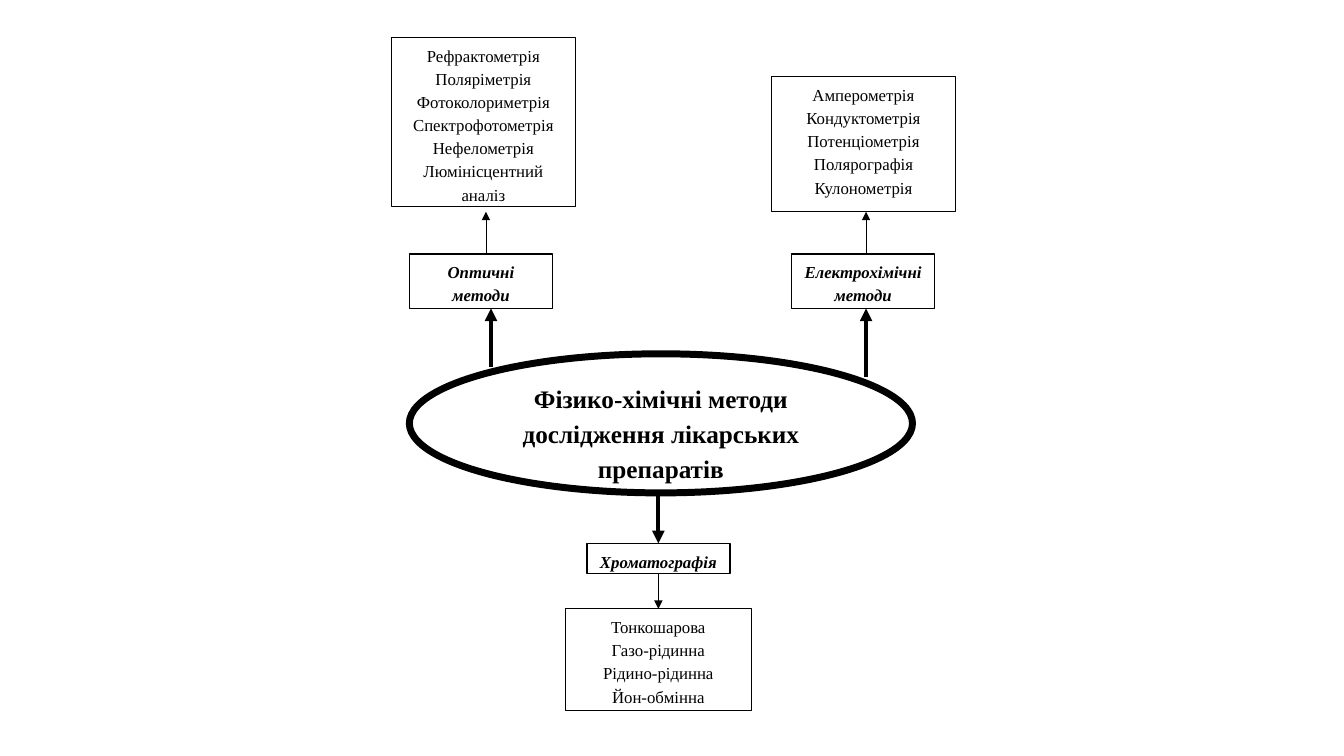
from lxml import etree
from pptx import Presentation
from pptx.dml.color import RGBColor
from pptx.enum.shapes import MSO_CONNECTOR as Connector, MSO_SHAPE as Shape
from pptx.enum.text import MSO_ANCHOR as Anchor, PP_ALIGN as Align
from pptx.oxml.ns import qn
from pptx.util import Inches, Pt

COLORS = {"ink": "000000", "paper": "FFFFFF"}
FONT = "Times New Roman"
TOP, BOTTOM = 0, 2  # connection sites of a rectangle

# Text formats and outline widths for the three kinds of node
STYLES = {
    "topic": ({"size": Pt(18), "bold": True}, 5),
    "method": ({"size": Pt(12), "bold": True, "italic": True}, 1),
    "list": ({"size": Pt(12)}, 0.75),
}
THICK, THIN = 3, 0.25


def color(name):
    return RGBColor.from_string(COLORS[name])


def add_node(slide, kind, box, lines, preset=Shape.RECTANGLE):
    """Outlined shape with centred text, one paragraph per line."""
    font_format, outline = STYLES[kind]
    shape = slide.shapes.add_shape(preset, *map(Inches, box))
    shape.shadow.inherit = False
    shape.fill.solid()
    shape.fill.fore_color.rgb = color("paper")
    shape.line.color.rgb = color("ink")
    shape.line.width = Pt(outline)

    frame = shape.text_frame
    frame.word_wrap = True
    frame.vertical_anchor = Anchor.TOP
    frame.text = "\n".join(lines)
    for paragraph in frame.paragraphs:
        paragraph.alignment = Align.CENTER
        paragraph.line_spacing = 1.15
        paragraph.font.name = FONT
        paragraph.font.color.rgb = color("ink")
        for name, value in font_format.items():
            setattr(paragraph.font, name, value)
    return shape


def add_arrow(slide, x, start, end, width):
    """Vertical arrow pointing at end."""
    arrow = slide.shapes.add_connector(
        Connector.STRAIGHT, *map(Inches, (x, start, x, end)))
    arrow.line.color.rgb = color("ink")
    arrow.line.width = Pt(width)
    etree.SubElement(arrow.line._get_or_add_ln(), qn("a:tailEnd"), type="triangle")
    etree.SubElement(arrow._element.spPr, qn("a:effectLst"))
    return arrow


def add_topic(slide, box):
    add_node(slide, "topic", box,
             ["Фізико-хімічні методи дослідження лікарських препаратів"], Shape.OVAL)


def add_upper_branch(slide, box, method, list_box, techniques, root, tip, xs):
    """Method above the topic, with its techniques above it."""
    left, top, width, height = box
    add_node(slide, "method", box, [method])
    add_node(slide, "list", list_box, techniques)
    add_arrow(slide, xs[0], root, top + height, THICK)
    add_arrow(slide, xs[1], top, tip, THIN)


def add_lower_branch(slide, box, method, list_box, techniques, root):
    """Method below the topic, with its techniques below it."""
    left, top, width, height = box
    center = left + width / 2
    method_node = add_node(slide, "method", box, [method])
    list_node = add_node(slide, "list", list_box, techniques)
    add_arrow(slide, center, root, top, THICK).end_connect(method_node, TOP)
    link = add_arrow(slide, center, top + height, list_box[1], THIN)
    link.begin_connect(method_node, BOTTOM)
    link.end_connect(list_node, TOP)


def main():
    presentation = Presentation()
    presentation.slide_width = Inches(13.33)
    presentation.slide_height = Inches(7.5)
    slide = presentation.slides.add_slide(presentation.slide_layouts[6])

    add_topic(slide, (4.06, 3.51, 4.99, 1.38))

    # Optical methods
    add_upper_branch(
        slide, (4.06, 2.52, 1.42, 0.54), "Оптичні методи",
        (3.88, 0.37, 1.83, 1.68),
        ["Рефрактометрія", "Поляріметрія", "Фотоколориметрія",
         "Спектрофотометрія", "Нефелометрія", "Люмінісцентний аналіз"],
        root=3.64, tip=2.1, xs=(4.87, 4.82))

    # Electrochemical methods
    add_upper_branch(
        slide, (7.85, 2.52, 1.42, 0.54), "Електрохімічні\vметоди",
        (7.65, 0.76, 1.83, 1.34),
        ["Амперометрія", "Кондуктометрія", "Потенціометрія",
         "Полярографія", "Кулонометрія"],
        root=3.74, tip=2.1, xs=(8.59, 8.59))

    # Chromatography
    add_lower_branch(
        slide, (5.82, 5.39, 1.42, 0.3), "Хроматографія",
        (5.61, 6.04, 1.84, 1.01),
        ["Тонкошарова", "Газо-рідинна", "Рідино-рідинна", "Йон-обмінна"],
        root=4.89)

    presentation.save("out.pptx")


if __name__ == "__main__":
    main()
